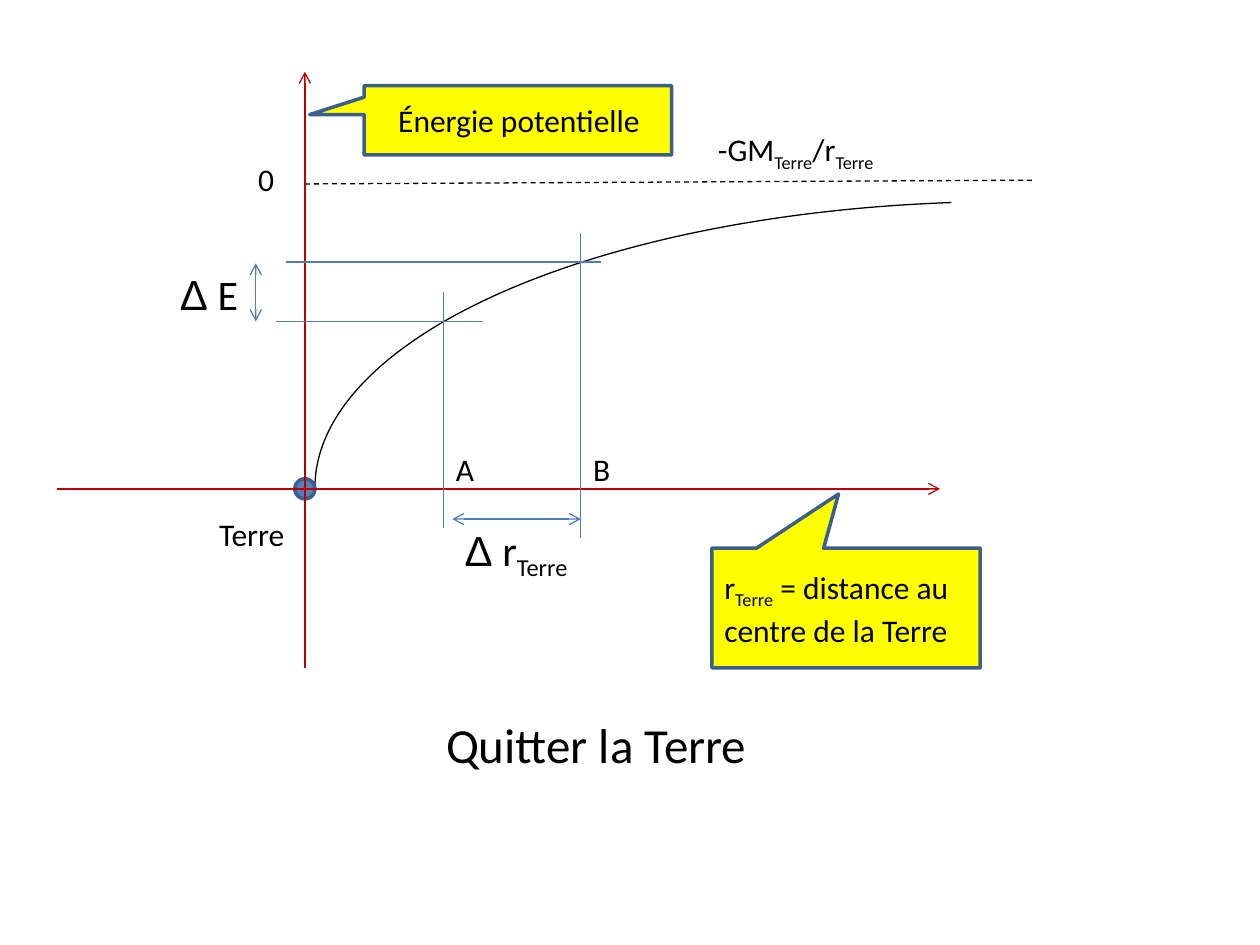
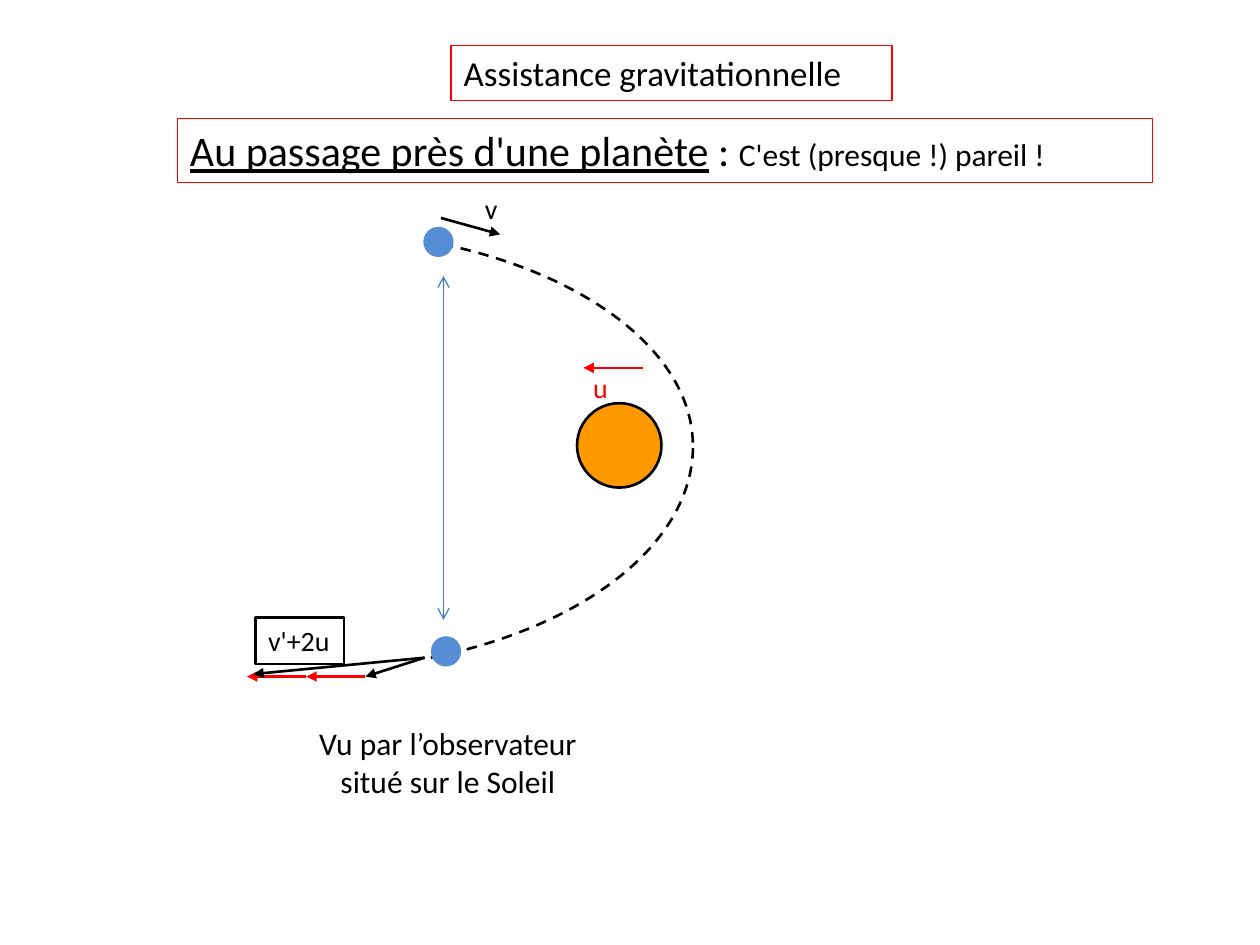
from lxml import etree
from pptx import Presentation
from pptx.dml.color import RGBColor
from pptx.enum.dml import MSO_LINE
from pptx.enum.shapes import MSO_CONNECTOR, MSO_SHAPE
from pptx.enum.text import MSO_ANCHOR, MSO_AUTO_SIZE, PP_ALIGN
from pptx.oxml.ns import qn
from pptx.util import Inches, Pt

BLACK = RGBColor(0x00, 0x00, 0x00)
RED = RGBColor(0xFF, 0x00, 0x00)
AXIS_RED = RGBColor(0xC0, 0x00, 0x00)
GUIDE_BLUE = RGBColor(0x4B, 0x7E, 0xBC)
EARTH_BLUE = RGBColor(0x4F, 0x81, 0xBD)
OUTLINE_BLUE = RGBColor(0x3A, 0x5F, 0x8C)
PROBE_BLUE = RGBColor(0x55, 0x8E, 0xD5)
PLANET_ORANGE = RGBColor(0xFF, 0x99, 0x00)
YELLOW = RGBColor(0xFF, 0xFF, 0x00)

ARC = MSO_SHAPE.ARC
ELLIPSE = MSO_SHAPE.OVAL
CALLOUT = MSO_SHAPE.RECTANGULAR_CALLOUT
STRAIGHT = MSO_CONNECTOR.STRAIGHT
DASH = MSO_LINE.DASH
LEFT, CENTER = PP_ALIGN.LEFT, PP_ALIGN.CENTER
TOP, MIDDLE = MSO_ANCHOR.TOP, MSO_ANCHOR.MIDDLE
NO_AUTOSIZE = MSO_AUTO_SIZE.NONE

THIN, MEDIUM, THICK = 0.75, 1.5, 2
TITLE_ONLY = 5
CURVE_STEPS = 40
SUBSCRIPT = {"baseline": "-25000"}
TERRE = ("Terre", SUBSCRIPT)


class Deck:
    font_name = "Calibri"

    def __init__(self):
        self.presentation = Presentation()
        self.presentation.slide_width = Inches(10)
        self.presentation.slide_height = Inches(7.5)
        self.slide = None

    def new_slide(self):
        layout = self.presentation.slide_layouts[TITLE_ONLY]
        self.slide = self.presentation.slides.add_slide(layout)

    def outline(self, shape, color, width, dash=None):
        if color is None:
            shape.line.fill.background()
            return
        shape.line.color.rgb = color
        shape.line.width = Pt(width)
        if dash is not None:
            shape.line.dash_style = dash

    def fill_text(self, shape, paragraphs, size, color=BLACK, align=LEFT, anchor=TOP):
        frame = shape.text_frame
        frame.auto_size = NO_AUTOSIZE
        frame.word_wrap = True
        frame.vertical_anchor = anchor
        for index, runs in enumerate(paragraphs):
            paragraph = frame.add_paragraph() if index else frame.paragraphs[0]
            paragraph.alignment = align
            for text, style in runs:
                run = paragraph.add_run()
                run.text = text
                run.font.name = style.get("font", self.font_name)
                run.font.size = Pt(style.get("size", size))
                run.font.color.rgb = color
                if "underline" in style:
                    run.font.underline = True
                if "baseline" in style:
                    run.font._element.set("baseline", style["baseline"])

    def title(self, text, box, size, border=None):
        shape = self.slide.shapes.title
        shape.left, shape.top, shape.width, shape.height = map(Inches, box)
        self.fill_text(shape, [[(text, {})]], size)
        self.outline(shape, border, THIN)

    def text(self, paragraphs, box, size=18, color=BLACK, align=LEFT,
             border=None, width=THIN):
        shape = self.slide.shapes.add_textbox(*map(Inches, box))
        self.fill_text(shape, paragraphs, size, color, align)
        self.outline(shape, border, width)

    def label(self, text, box, **style):
        self.text([[(text, {})]], box, **style)

    def shape(self, kind, box, fill=None, line=None, width=THIN, adjustments=()):
        shape = self.slide.shapes.add_shape(kind, *map(Inches, box))
        shape.shadow.inherit = False
        if fill is None:
            shape.fill.background()
        else:
            shape.fill.solid()
            shape.fill.fore_color.rgb = fill
        self.outline(shape, line, width)
        for index, value in enumerate(adjustments):
            shape.adjustments[index] = value
        return shape

    def callout(self, runs, box, pointer, margin_left=0.1):
        shape = self.shape(CALLOUT, box, YELLOW, OUTLINE_BLUE, THICK, pointer)
        shape.text_frame.margin_left = Inches(margin_left)
        self.fill_text(shape, [runs], 18, anchor=MIDDLE)

    def line(self, start, end, color, width=THIN, head=None, tail=None, dash=None):
        connector = self.slide.shapes.add_connector(
            STRAIGHT, *map(Inches, (*start, *end)))
        self.outline(connector, color, width, dash)
        line_element = connector.line._get_or_add_ln()
        for tag, arrow in (("a:headEnd", head), ("a:tailEnd", tail)):
            if arrow:
                etree.SubElement(line_element, qn(tag)).set("type", arrow)
        etree.SubElement(connector._element.spPr, qn("a:effectLst"))

    def dimension(self, start, end):
        self.line(start, end, GUIDE_BLUE, head="arrow", tail="arrow")

    def dashed_curve(self, *controls):
        points = []
        for step in range(CURVE_STEPS + 1):
            t = step / CURVE_STEPS
            weights = ((1 - t) ** 3, 3 * t * (1 - t) ** 2,
                       3 * t ** 2 * (1 - t), t ** 3)
            points.append(tuple(
                Inches(sum(weight * value for weight, value in zip(weights, axis)))
                for axis in zip(*controls)))
        builder = self.slide.shapes.build_freeform(*points[0])
        builder.add_line_segments(points[1:], close=False)
        shape = builder.convert_to_shape()
        shape.shadow.inherit = False
        shape.fill.background()
        self.outline(shape, BLACK, MEDIUM, DASH)


def build_leaving_earth(deck):
    deck.new_slide()
    deck.title("Quitter la Terre", (3.44, 5.62, 2.8, 0.57), 28)

    energy_curve = deck.shape(ARC, (2.5, 1.6, 11.02, 4.54), line=BLACK,
                              adjustments=(168.88, 0))
    energy_curve._element.spPr.get_or_add_xfrm().set("flipH", "1")
    deck.shape(ELLIPSE, (2.34, 3.8, 0.16, 0.16), EARTH_BLUE, OUTLINE_BLUE, THICK)

    deck.line((2.42, 1.46), (8.19, 1.43), BLACK, dash=DASH)
    deck.line((2.42, 5.3), (2.42, 0.57), AXIS_RED, tail="arrow")
    deck.line((0.45, 3.88), (7.46, 3.88), AXIS_RED, tail="arrow")
    deck.label("0", (1.95, 1.22, 0.33, 0.37))
    deck.label("Terre", (1.64, 4.04, 0.76, 0.4))

    deck.callout([("r", {}), TERRE, (" = distance au centre de la Terre", {})],
                 (5.65, 4.35, 2.13, 0.95), (-0.028, -0.952))
    deck.callout([("Énergie potentielle", {})],
                 (2.89, 0.68, 2.44, 0.55), (-0.677, -0.082), margin_left=0.27)
    deck.text([[("-GM", {}), TERRE, ("/r", {}), TERRE]], (5.6, 0.98, 1.64, 0.4))

    for name, x, top, bottom in (("A", 3.52, 2.32, 4.19), ("B", 4.61, 1.85, 4.27)):
        deck.line((x, top), (x, bottom), GUIDE_BLUE)
        deck.label(name, (x, 3.52, 0.35, 0.4))
    for y, left, right in ((2.55, 2.19, 3.83), (2.08, 2.27, 4.77)):
        deck.line((left, y), (right, y), GUIDE_BLUE)

    delta = ("Δ", {"font": "Arial"})
    deck.dimension((3.59, 4.12), (4.61, 4.12))
    deck.text([[delta, (" r", {}), TERRE]], (3.59, 4.11, 1.14, 0.51), size=24)
    deck.dimension((2.03, 2.09), (2.03, 2.55))
    deck.text([[delta, (" E", {})]], (1.33, 2.08, 0.72, 0.51), size=24)


def build_gravity_assist(deck):
    deck.new_slide()
    deck.title("Assistance gravitationnelle", (3.58, 0.36, 3.5, 0.44), 20, RED)
    deck.text([[("Au passage près d'une planète", {"underline": True}),
                (" : ", {}), ("C'est (presque !) pareil !", {"size": 18})]],
              (1.41, 0.94, 7.74, 0.51), size=24, border=RED)

    exit_point = (3.37, 5.22)
    deck.line(exit_point, (2.9, 5.37), BLACK, MEDIUM, tail="triangle")
    for x in (2.9, 2.43):
        deck.line((x, 5.37), (x - 0.47, 5.37), RED, MEDIUM, tail="triangle")
    deck.line(exit_point, (2.01, 5.35), BLACK, MEDIUM, tail="triangle")
    deck.label("v'+2u", (2.03, 4.9, 0.7, 0.37), size=16, border=BLACK, width=MEDIUM)

    deck.shape(ELLIPSE, (4.58, 3.2, 0.67, 0.67), PLANET_ORANGE, BLACK, MEDIUM)
    deck.dashed_curve((3.37, 1.91), (4.64, 2.14), (5.5, 2.8), (5.5, 3.54))
    deck.dashed_curve((3.42, 5.22), (4.66, 4.97), (5.5, 4.3), (5.5, 3.54))
    for left, top in ((3.36, 1.8), (3.42, 5.05)):
        deck.shape(ELLIPSE, (left, top, 0.24, 0.24), PROBE_BLUE)

    deck.line((3.5, 1.73), (3.97, 1.86), BLACK, MEDIUM, tail="triangle")
    deck.label("v", (3.75, 1.47, 0.34, 0.37), size=16)
    deck.line((5.1, 2.92), (4.63, 2.92), RED, tail="triangle")
    deck.label("u", (4.61, 2.89, 0.34, 0.37), size=16, color=RED)
    deck.text([[("Vu par l’observateur", {})], [("situé sur le Soleil", {})]],
              (2.42, 5.7, 2.27, 0.71), align=CENTER)
    deck.dimension((3.52, 2.19), (3.52, 4.92))


def main():
    deck = Deck()
    build_leaving_earth(deck)
    build_gravity_assist(deck)
    deck.presentation.save("out.pptx")


if __name__ == "__main__":
    main()
